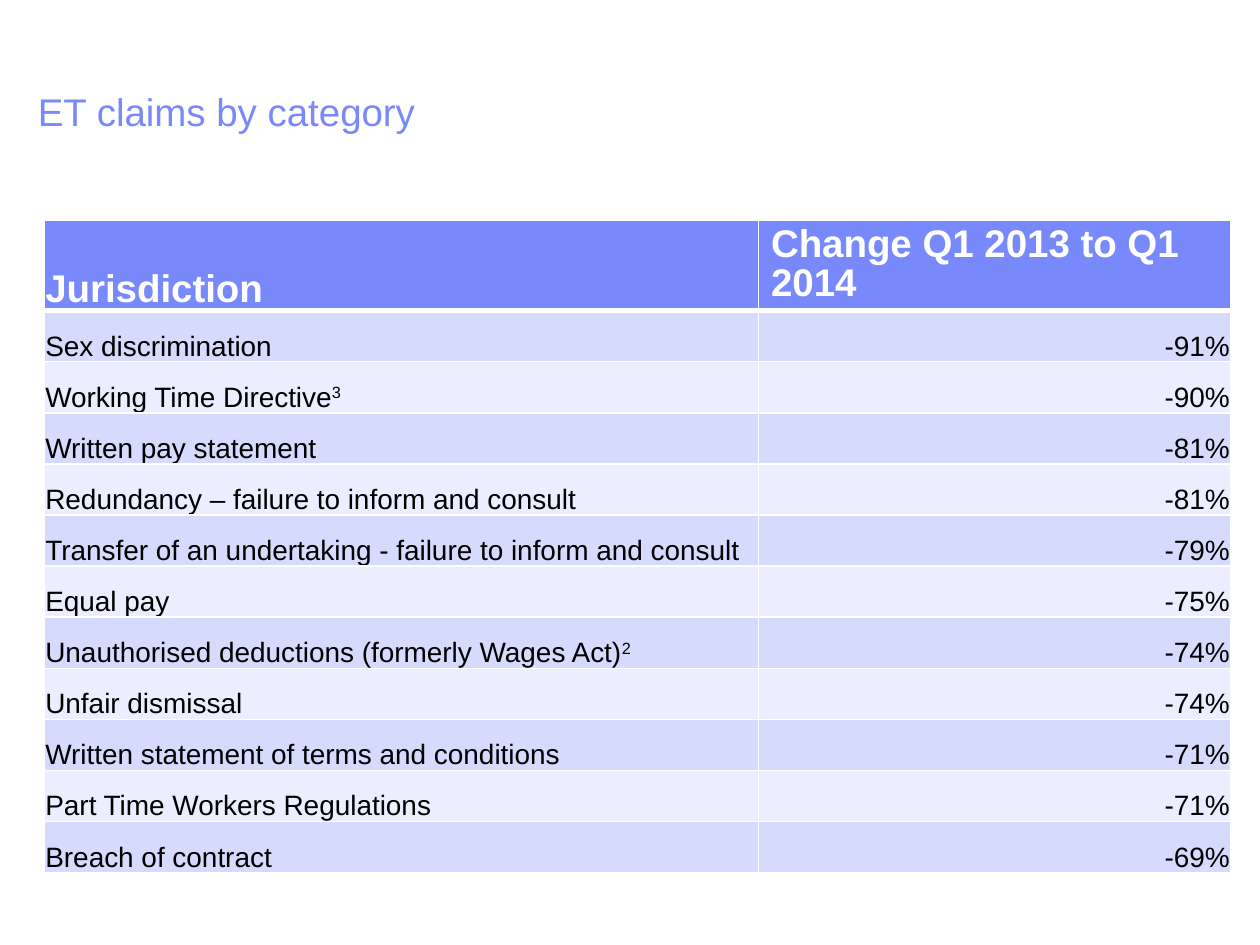
from lxml.etree import SubElement
from pptx import Presentation
from pptx.dml.color import RGBColor
from pptx.enum.text import MSO_ANCHOR, PP_ALIGN
from pptx.oxml.ns import qn
from pptx.util import Inches, Pt

# Content: label, footnote mark, change
TITLE = "ET claims by category"
HEADS = ("Jurisdiction", "Change Q1 2013 to Q1 2014")
CLAIMS = [
    ("Sex discrimination", "", "-91%"),
    ("Working Time Directive", "3", "-90%"),
    ("Written pay statement", "", "-81%"),
    ("Redundancy – failure to inform and consult", "", "-81%"),
    ("Transfer of an undertaking - failure to inform and consult", "", "-79%"),
    ("Equal pay", "", "-75%"),
    ("Unauthorised deductions (formerly Wages Act)", "2", "-74%"),
    ("Unfair dismissal", "", "-74%"),
    ("Written statement of terms and conditions", "", "-71%"),
    ("Part Time Workers Regulations", "", "-71%"),
    ("Breach of contract", "", "-69%"),
]

FONT = "Arial"
BLUE = RGBColor(0x78, 0x89, 0xFB)
DARK = RGBColor(0xD6, 0xDA, 0xFD)
LIGHT = RGBColor(0xEC, 0xED, 0xFE)
WHITE = RGBColor(0xFF, 0xFF, 0xFF)
BLACK = RGBColor(0x00, 0x00, 0x00)
WIDTHS = (5.67, 3.75)


def style(para, size, color, bold=False, align=PP_ALIGN.LEFT):
    para.alignment = align
    para.line_spacing = 0.9
    for run in para.runs:
        font = run.font
        font.name, font.size, font.bold = FONT, Pt(size), bold
        font.color.rgb = color


def paint(cell, color):
    cell.fill.solid()
    cell.fill.fore_color.rgb = color


def border(cell, below):
    """White lines on all sides; they must precede the cell's fill."""
    props = cell._tc.get_or_add_tcPr()
    for tag, width in (("lnL", 1), ("lnR", 1), ("lnT", 1), ("lnB", below)):
        line = SubElement(props, qn("a:" + tag), w=str(Pt(width)))
        fill = SubElement(line, qn("a:solidFill"))
        SubElement(fill, qn("a:srgbClr"), val=str(WHITE))


def sink(cell):
    """Set the text on the cell's floor with thin margins."""
    cell.vertical_anchor = MSO_ANCHOR.BOTTOM
    cell.margin_left = cell.margin_right = cell.margin_top = Inches(0.01)
    cell.margin_bottom = 0


deck = Presentation()
deck.slide_width, deck.slide_height = Inches(10), Inches(7.5)
slide = deck.slides.add_slide(deck.slide_layouts[5])

# Title
title = slide.shapes.title
title.left, title.top = Inches(0.2), Inches(0.69)
title.width, title.height = Inches(9.5), Inches(0.7)
frame = title.text_frame
frame.text = TITLE
frame.vertical_anchor = MSO_ANCHOR.TOP
style(frame.paragraphs[0], 22, BLUE)

# Table
table = slide.shapes.add_table(
    len(CLAIMS) + 1, len(HEADS), Inches(0.35), Inches(1.75),
    Inches(sum(WIDTHS)), Inches(4.87)).table
for col, width in zip(table.columns, WIDTHS):
    col.width = Inches(width)

# Header row
for col, head in enumerate(HEADS):
    cell = table.cell(0, col)
    cell.text_frame.text = head
    style(cell.text_frame.paragraphs[0], 22, WHITE, bold=True)
    border(cell, 3)
    paint(cell, BLUE)
sink(table.cell(0, 0))

# Claim rows
for row, (label, mark, change) in enumerate(CLAIMS, 1):
    for col, text in enumerate((label, change)):
        cell = table.cell(row, col)
        cell.text_frame.text = text
        para = cell.text_frame.paragraphs[0]
        if mark and col == 0:
            note = para.add_run()
            note.text = mark
            note.font._element.set("baseline", "30000")
        style(para, 16, BLACK, align=PP_ALIGN.RIGHT if col else PP_ALIGN.LEFT)
        sink(cell)
        if row > 1:
            border(cell, 1)
        paint(cell, DARK if row % 2 else LIGHT)

deck.save("out.pptx")
